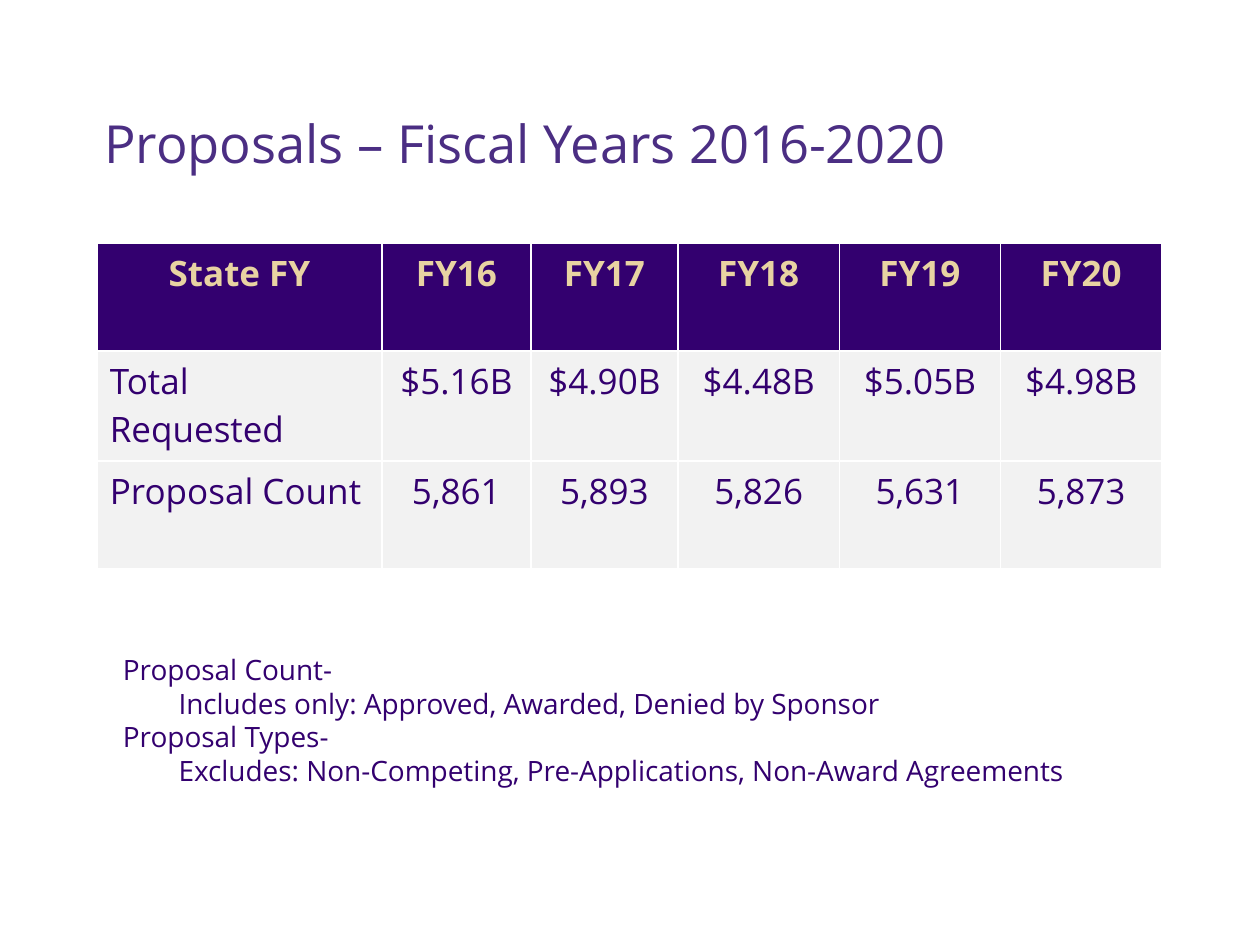
from pptx import Presentation
from pptx import util as u
from pptx.dml.color import RGBColor
from pptx.enum import text
from pptx.oxml import parse_xml
from pptx.oxml.ns import nsdecls

FONT = "Open Sans"
PURPLE, TITLE_PURPLE, GOLD = "33006F", "4B2E83", "E8D3A2"
PALE, WHITE = "F2F2F2", "FFFFFF"
COLUMN_WIDTHS = [5.74, 3, 2.97, 3.25, 3.25, 3.25]
ROW_HEIGHTS = [2.18, 2.21, 2.18]
ROWS = [
    ["State FY", "FY16", "FY17", "FY18", "FY19", "FY20"],
    ["Total Requested", "$5.16B", "$4.90B", "$4.48B", "$5.05B", "$4.98B"],
    ["Proposal Count", "5,861", "5,893", "5,826", "5,631", "5,873"],
]
NOTES = [
    ("Proposal Count-", "Includes only: Approved, Awarded, Denied by Sponsor"),
    ("Proposal Types-", "Excludes: Non-Competing, Pre-Applications, Non-Award Agreements"),
]


def colour(value):
    """Turn a hex string into a colour."""
    return RGBColor.from_string(value)


def add_span(para, words, size, tint, bold=False):
    """Add one styled run to a paragraph."""
    span = para.add_run()
    span.text = words
    span.font.name = FONT
    span.font.size = u.Pt(size)
    span.font.bold = bold
    span.font.color.rgb = colour(tint)


def add_frame(page, box):
    """Add a wrapping text box and return its text frame."""
    frame = page.shapes.add_textbox(*map(u.Cm, box)).text_frame
    frame.word_wrap = True
    return frame


def add_title(page, box):
    """Place the title at the bottom of its box."""
    frame = add_frame(page, box)
    frame.vertical_anchor = text.MSO_ANCHOR.BOTTOM
    frame.margin_top = frame.margin_bottom = u.Cm(0.25)
    para = frame.paragraphs[0]
    para.line_spacing = 0.9
    add_span(para, "Proposals – Fiscal Years 2016-2020", 30, TITLE_PURPLE)


def add_borders(cell):
    """Draw a thin white line on each side of a cell."""
    properties = cell._tc.get_or_add_tcPr()
    for side in "LRTB":
        properties.append(parse_xml(
            f'<a:ln{side} {nsdecls("a")} w="12700"><a:solidFill>'
            f'<a:srgbClr val="{WHITE}"/></a:solidFill></a:ln{side}>'))


def fill_cell(cell, words, is_header, is_label):
    """Write and style one table cell."""
    add_borders(cell)
    cell.fill.solid()
    cell.fill.fore_color.rgb = colour(PURPLE if is_header else PALE)
    para = cell.text_frame.paragraphs[0]
    if is_header or not is_label:
        para.alignment = text.PP_ALIGN.CENTER
    add_span(para, words, 20, GOLD if is_header else PURPLE, is_header)


def add_proposals(page, left, top):
    """Place the table of proposals by fiscal year."""
    box = (left, top, sum(COLUMN_WIDTHS), sum(ROW_HEIGHTS))
    table = page.shapes.add_table(len(ROWS), len(COLUMN_WIDTHS), *map(u.Cm, box)).table
    for column, width in zip(table.columns, COLUMN_WIDTHS):
        column.width = u.Cm(width)
    for row, height in zip(table.rows, ROW_HEIGHTS):
        row.height = u.Cm(height)
    for r, row in enumerate(ROWS):
        for c, words in enumerate(row):
            fill_cell(table.cell(r, c), words, r == 0, c == 0)


def add_notes(page, box):
    """Place the notes, each heading followed by its indented detail."""
    frame = add_frame(page, box)
    lines = [line for note in NOTES for line in zip(note, (0.15, 1.27))]
    for i, (words, indent) in enumerate(lines):
        para = frame.add_paragraph() if i else frame.paragraphs[0]
        properties = para._p.get_or_add_pPr()
        properties.set("marL", "0")
        properties.set("indent", str(u.Cm(indent)))
        add_span(para, words, 16, PURPLE)


def main():
    """Build the slide and save it."""
    deck = Presentation()
    deck.slide_width, deck.slide_height = u.Cm(25.4), u.Cm(19.05)
    page = deck.slides.add_slide(deck.slide_layouts[6])
    add_title(page, (1.85, 1.04, 22.73, 2.74))
    add_proposals(page, 1.96, 4.9)
    add_notes(page, (2.08, 13.03, 21.26, 2.11))
    deck.save("out.pptx")


if __name__ == "__main__":
    main()
